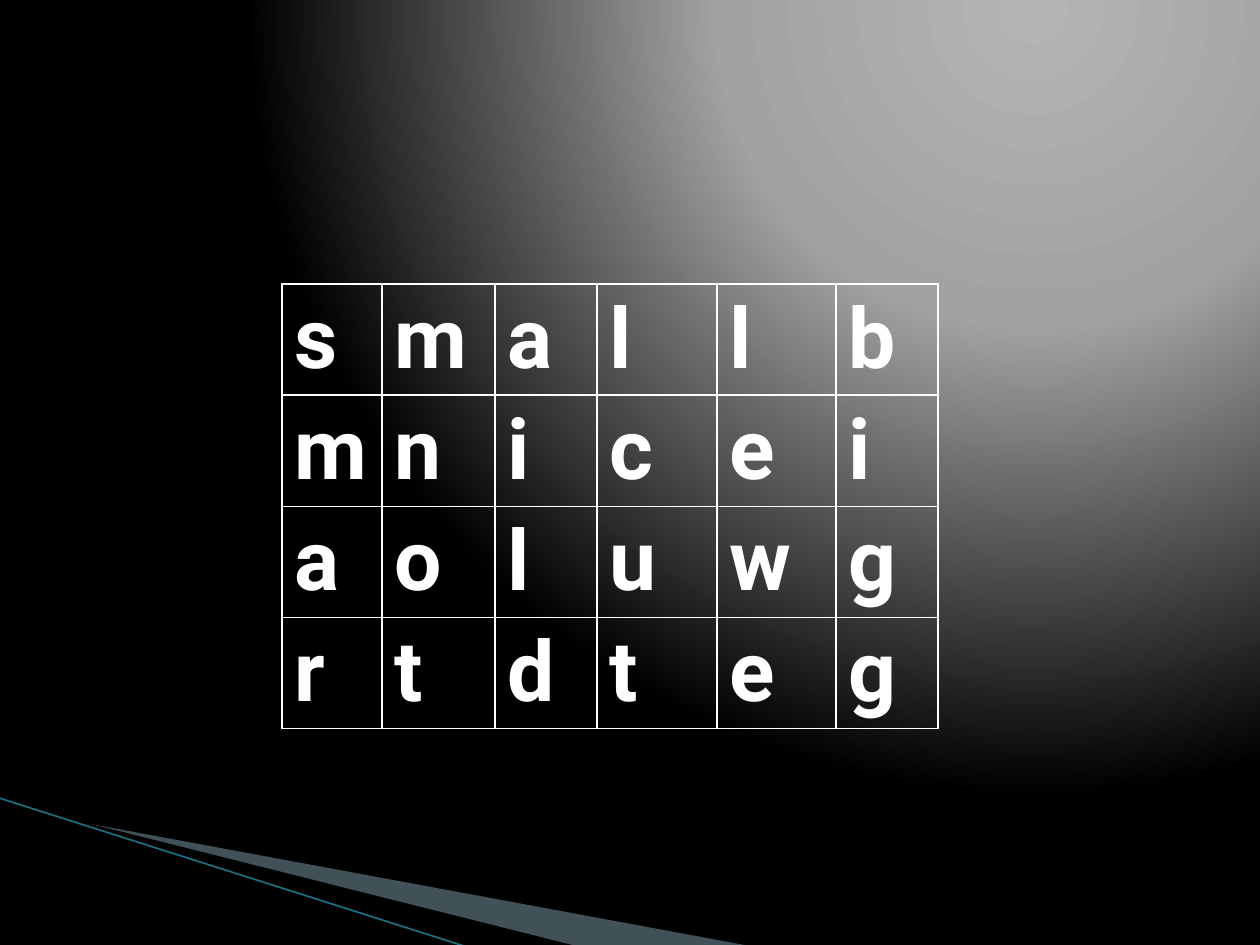
from dataclasses import dataclass

from lxml.etree import SubElement
from pptx import Presentation
from pptx.dml.color import RGBColor
from pptx.enum.shapes import MSO_CONNECTOR
from pptx.oxml import parse_xml
from pptx.oxml.ns import nsdecls, qn
from pptx.util import Pt

PX = 9144000 // 1260


@dataclass(frozen=True)
class Theme:
    font: str = "Roboto"
    letter_size: int = 48
    white: str = "FFFFFF"
    black: str = "000000"
    wedge: str = "A0CBDC"
    stripe: str = "1A7085"
    glow: tuple = ((0, "B4B4B4"), (40, "A2A2A2"), (100, "000000"))


theme = Theme()


def add_wedge(slide, points, color, opacity=100):
    builder = slide.shapes.build_freeform(*points[0], scale=PX)
    builder.add_line_segments(points[1:], close=True)
    sp = builder.convert_to_shape()
    sp.shadow.inherit = False
    sp.line.fill.background()
    sp.fill.solid()
    sp.fill.fore_color.rgb = RGBColor.from_string(color)
    if opacity < 100:
        clr = sp.element.spPr.find(".//" + qn("a:srgbClr"))
        SubElement(clr, qn("a:alpha"), val=str(opacity * 1000))


def add_borders(cell, color, width):
    tc_pr = cell._tc.get_or_add_tcPr()
    for i, side in enumerate("LRTB"):
        tc_pr.insert(i, parse_xml(
            f'<a:ln{side} {nsdecls("a")} w="{width}"><a:solidFill>'
            f'<a:srgbClr val="{color}"/></a:solidFill></a:ln{side}>'))


prs = Presentation()
prs.slide_width, prs.slide_height = 1260 * PX, 945 * PX
s = prs.slides.add_slide(prs.slide_layouts[6])

# Background: glow centred near the top right
s.background.fill.solid()
solid = s.element.find(".//" + qn("p:bgPr")).find(qn("a:solidFill"))
stops = "".join(f'<a:gs pos="{pos * 1000}"><a:srgbClr val="{color}"/></a:gs>'
                for pos, color in theme.glow)
solid.getparent().replace(solid, parse_xml(
    f'<a:gradFill {nsdecls("a")} rotWithShape="1"><a:gsLst>{stops}</a:gsLst>'
    '<a:path path="circle"><a:fillToRect l="65000" t="0" r="0" b="98000"/>'
    '</a:path></a:gradFill>'))

# Corner decoration
add_wedge(s, [(69, 820), (750, 946), (575, 946), (69, 819)], theme.wedge, 40)
add_wedge(s, [(67, 818), (576, 946), (469, 948), (68, 819)], theme.black)
stripe = s.shapes.add_connector(MSO_CONNECTOR.STRAIGHT,
                                -1 * PX, 798 * PX, 467 * PX, 947 * PX)
stripe.line.color.rgb = RGBColor.from_string(theme.stripe)
stripe.line.width = Pt(0.95)
SubElement(stripe.element.spPr, qn("a:effectLst"))

# Letter grid
words = ["smallb", "mnicei", "aoluwg", "rtdteg"]
col_widths = [100, 113, 102, 120, 119, 102]
row_height = 111
frame = s.shapes.add_table(len(words), len(col_widths), 282 * PX, 284 * PX,
                           sum(col_widths) * PX, len(words) * row_height * PX)
table = frame.table
table.first_row = table.horz_banding = False
for col, width in zip(table.columns, col_widths):
    col.width = width * PX
for row, word in zip(table.rows, words):
    row.height = row_height * PX
    for cell, letter in zip(row.cells, word):
        cell.fill.background()
        add_borders(cell, theme.white, Pt(1))
        p = cell.text_frame.paragraphs[0]
        p.text = letter
        p.font.name = theme.font
        p.font.size = Pt(theme.letter_size)
        p.font.bold = True
        p.font.color.rgb = RGBColor.from_string(theme.white)

prs.save("out.pptx")
